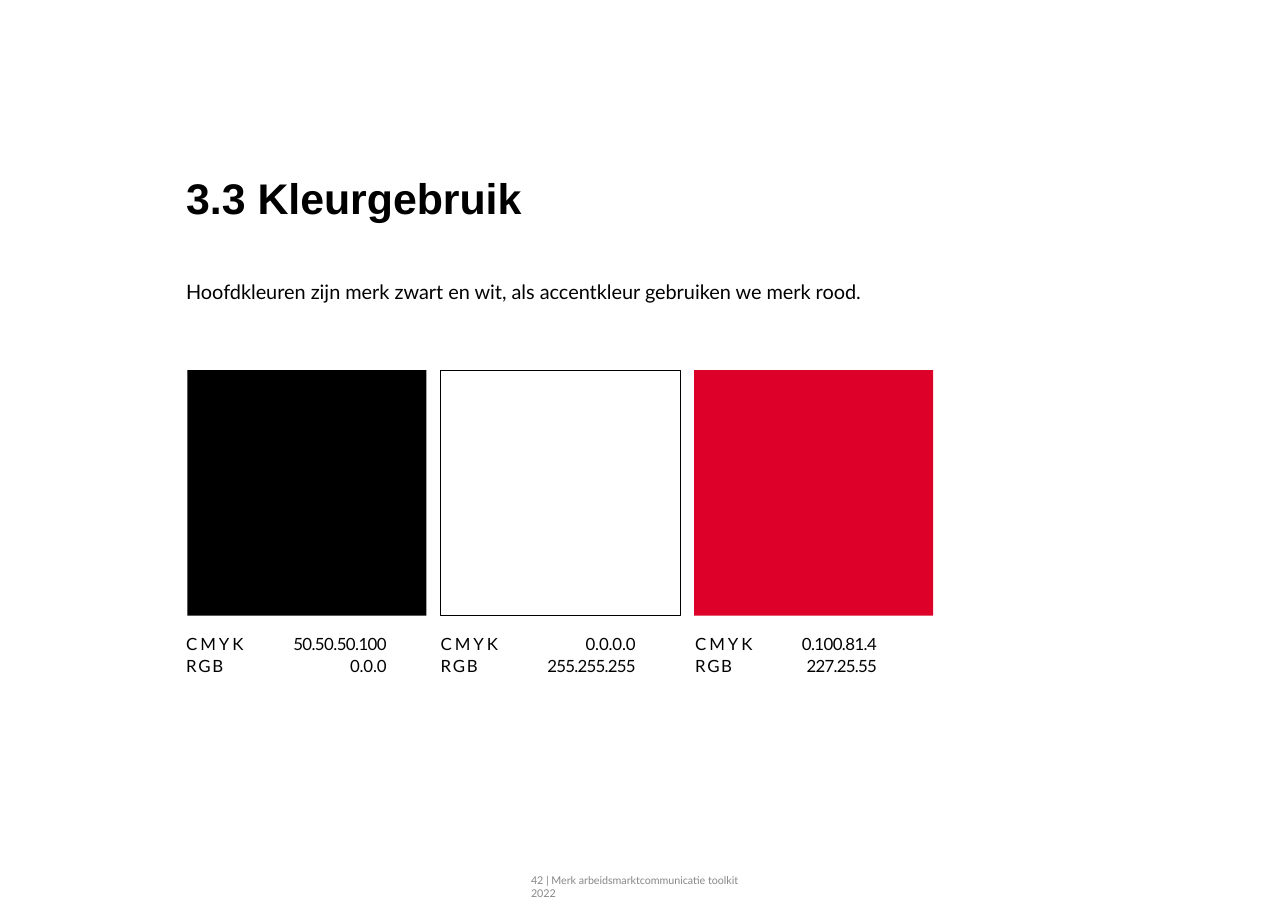
import pptx
import pptx.dml.color
import pptx.enum.shapes
import pptx.enum.text
import pptx.util

PX = 9144
COLORS = {"black": "000000", "white": "FFFFFF", "red": "DD0029", "grey": "878786"}
SWATCHES = ["black", "white", "red"]
SWATCH_LEFT, SWATCH_TOP, SWATCH_WIDTH, SWATCH_HEIGHT = 170, 336, 217, 223
SWATCH_STEP = 230
COLUMN_WIDTHS = [79, 130, 100, 129, 102, 93]
LEFT_MARGINS = [3, 0, 25, 0, 27, 0]
RIGHT_MARGINS = [0, 24, 0, 27, 0, 3]
CODE_ROWS = [
    (12.6, 0, [("CMYK", 190), ("50.50.50.100", -40), ("CMYK", 190),
               ("0.0.0.0", -10), ("CMYK", 190), ("0.100.81.4", -40)]),
    (12.9, 0.2, [("RGB", 110), ("0.0.0", -10), ("RGB", 110),
                 ("255.255.255", -50), ("RGB", 110), ("227.25.55", -50)]),
]


def px(*lengths):
    return [pptx.util.Emu(length * PX) for length in lengths]


def rgb(name):
    return pptx.dml.color.RGBColor.from_string(COLORS[name])


def set_font(para, family, size, color, bold=False):
    para.font.name = family
    para.font.size = pptx.util.Pt(size)
    para.font.bold = bold
    para.font.color.rgb = rgb(color)


def set_margins(holder, left, top, right, bottom):
    (holder.margin_left, holder.margin_top,
     holder.margin_right, holder.margin_bottom) = px(left, top, right, bottom)


def add_text(page, place, text, family, size, color="black", bold=False, indent=1):
    frame = page.shapes.add_textbox(*px(*place)).text_frame
    frame.word_wrap = True
    set_margins(frame, indent, 1, 0, 0)
    para = frame.paragraphs[0]
    para.text = text
    para.space_before = pptx.util.Pt(1)
    set_font(para, family, size, color, bold)


def add_swatch(page, index, color):
    place = px(SWATCH_LEFT + index * SWATCH_STEP, SWATCH_TOP, SWATCH_WIDTH, SWATCH_HEIGHT)
    box = page.shapes.add_shape(pptx.enum.shapes.MSO_SHAPE.RECTANGLE, *place)
    box.shadow.inherit = False
    if color == "white":
        box.fill.background()
        box.line.color.rgb = rgb("black")
        box.line.width = pptx.util.Pt(0.28)
    else:
        box.fill.solid()
        box.fill.fore_color.rgb = rgb(color)
        box.line.fill.background()


def fill_code(cell, column, text, tracking, leading, before):
    cell.fill.background()
    set_margins(cell, LEFT_MARGINS[column], 0, RIGHT_MARGINS[column], 0)
    para = cell.text_frame.paragraphs[0]
    para.line_spacing = pptx.util.Pt(leading)
    para.space_before = pptx.util.Pt(before)
    if column % 2:
        para.alignment = pptx.enum.text.PP_ALIGN.RIGHT
    set_font(para, "Lato", 11, "black")
    span = para.add_run()
    span.text = text
    span.font._element.set("spc", str(tracking))


def add_codes(page):
    place = px(166, 576, sum(COLUMN_WIDTHS), 40)
    table = page.shapes.add_table(len(CODE_ROWS), len(COLUMN_WIDTHS), *place).table
    table.first_row = False
    table.horz_banding = False
    for column, width in zip(table.columns, px(*COLUMN_WIDTHS)):
        column.width = width
    for row, (leading, before, codes) in enumerate(CODE_ROWS):
        for column, (text, tracking) in enumerate(codes):
            fill_code(table.cell(row, column), column, text, tracking, leading, before)


def main():
    deck = pptx.Presentation()
    deck.slide_width, deck.slide_height = px(1169, 827)
    page = deck.slides.add_slide(deck.slide_layouts[6])
    add_text(page, (168, 155, 342, 49), "3.3 Kleurgebruik", "Arial", 28, bold=True)
    add_text(page, (478, 792, 214, 13), "42 | Merk arbeidsmarktcommunicatie toolkit 2022",
             "Lato", 7, "grey", indent=4)
    add_text(page, (168, 253, 620, 23),
             "Hoofdkleuren zijn merk zwart en wit, als accentkleur gebruiken we merk rood.",
             "Lato", 13)
    for index, color in enumerate(SWATCHES):
        add_swatch(page, index, color)
    add_codes(page)
    deck.save("out.pptx")


if __name__ == "__main__":
    main()
